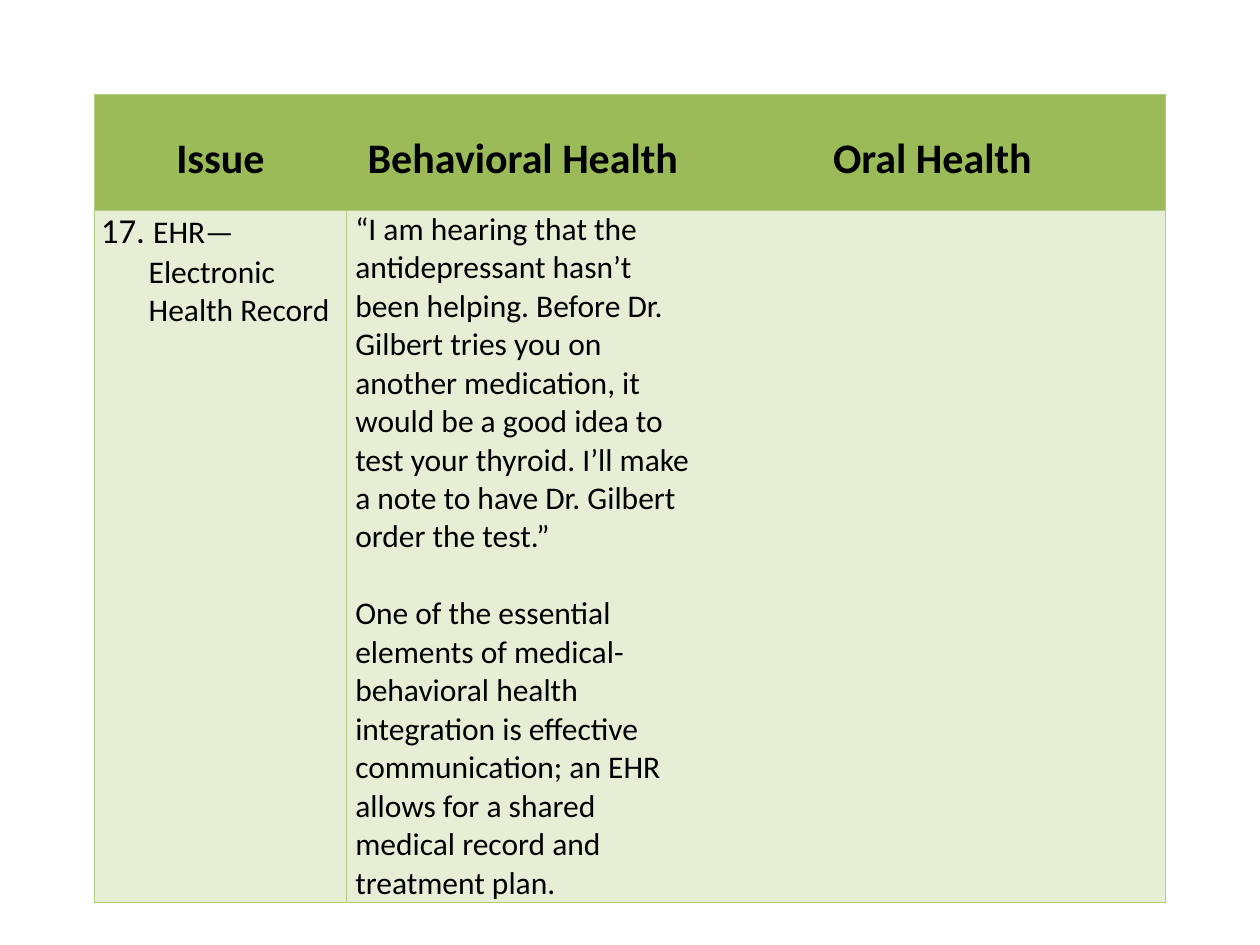
from lxml import etree
from pptx import Presentation
from pptx.dml.color import RGBColor
from pptx.enum.text import PP_ALIGN as Align
from pptx.oxml.ns import qn
from pptx.util import Inches, Pt

COLORS = {"header": "9BBB59", "body": "E6EED5", "border": "B3CC82", "text": "000000"}
COLUMN_WIDTHS = [2, 2.8, 3.7]
ROW_HEIGHTS = [0.92, 4.93]
HEADINGS = ["Issue", "Behavioral Health", "Oral Health"]
ISSUE = [("17. ", 20), ("EHR—Electronic Health Record", 18)]
BEHAVIORAL = [
    "“I am hearing that the antidepressant hasn’t been helping. Before Dr. Gilbert "
    "tries you on another medication, it would be a good idea to test your thyroid. "
    "I’ll make a note to have Dr. Gilbert order the test.”",
    "One of the essential elements of medical-behavioral health integration is "
    "effective communication; an EHR allows for a shared medical record and "
    "treatment plan.",
]


def add_span(para, text, size, bold=False):
    span = para.add_run()
    span.text = text
    for name, value in {"name": "Calibri", "size": Pt(size), "bold": bold}.items():
        setattr(span.font, name, value)
    span.font.color.rgb = RGBColor.from_string(COLORS["text"])


def set_borders(cell, sides):
    properties = cell._tc.get_or_add_tcPr()
    for index, side in enumerate("LRTB"):
        line = etree.Element(qn(f"a:ln{side}"), w=str(Pt(1)))
        if side in sides:
            fill = etree.SubElement(line, qn("a:solidFill"))
            etree.SubElement(fill, qn("a:srgbClr"), val=COLORS["border"])
        else:
            etree.SubElement(line, qn("a:noFill"))
        properties.insert(index, line)


def style_cell(cell, color, side_margin, top_margin, sides):
    margins = {"left": side_margin, "right": side_margin, "top": top_margin, "bottom": 0}
    for side, value in margins.items():
        setattr(cell, f"margin_{side}", Inches(value))
    cell.fill.solid()
    cell.fill.fore_color.rgb = RGBColor.from_string(COLORS[color])
    set_borders(cell, sides)


def add_issue_table(page):
    frame = page.shapes.add_table(
        len(ROW_HEIGHTS), len(COLUMN_WIDTHS), Inches(0.75), Inches(0.75),
        Inches(sum(COLUMN_WIDTHS)), Inches(sum(ROW_HEIGHTS)))
    table = frame.table
    for column, width in zip(table.columns, COLUMN_WIDTHS):
        column.width = Inches(width)
    for row, height in zip(table.rows, ROW_HEIGHTS):
        row.height = Inches(height)
    return table


def fill_header(table):
    for index, (heading, sides) in enumerate(zip(HEADINGS, ["LTB", "TB", "RTB"])):
        cell = table.cell(0, index)
        style_cell(cell, "header", 0.05, 0.31, sides)
        para = cell.text_frame.paragraphs[0]
        para.alignment = Align.CENTER
        add_span(para, heading, 24, bold=True)


def fill_issue(cell):
    para = cell.text_frame.paragraphs[0]
    indent = Inches(0.38)
    properties = para._p.get_or_add_pPr()
    properties.set("marL", str(indent))
    properties.set("indent", str(-indent))
    for text, size in ISSUE:
        add_span(para, text, size)


def fill_behavioral(cell):
    first = cell.text_frame.paragraphs[0]
    second = cell.text_frame.add_paragraph()
    second.space_before = Pt(22)
    for para, text in zip([first, second], BEHAVIORAL):
        add_span(para, text, 18)


def fill_body(table):
    margins = [0.05, 0.07, 0.07]
    for index, (margin, sides) in enumerate(zip(margins, ["LRTB", "LTB", "RTB"])):
        style_cell(table.cell(1, index), "body", margin, 0, sides)
    fill_issue(table.cell(1, 0))
    fill_behavioral(table.cell(1, 1))


def main():
    deck = Presentation()
    deck.slide_width, deck.slide_height = Inches(10), Inches(7.5)
    page = deck.slides.add_slide(deck.slide_layouts[6])
    table = add_issue_table(page)
    fill_header(table)
    fill_body(table)
    deck.save("out.pptx")


if __name__ == "__main__":
    main()
